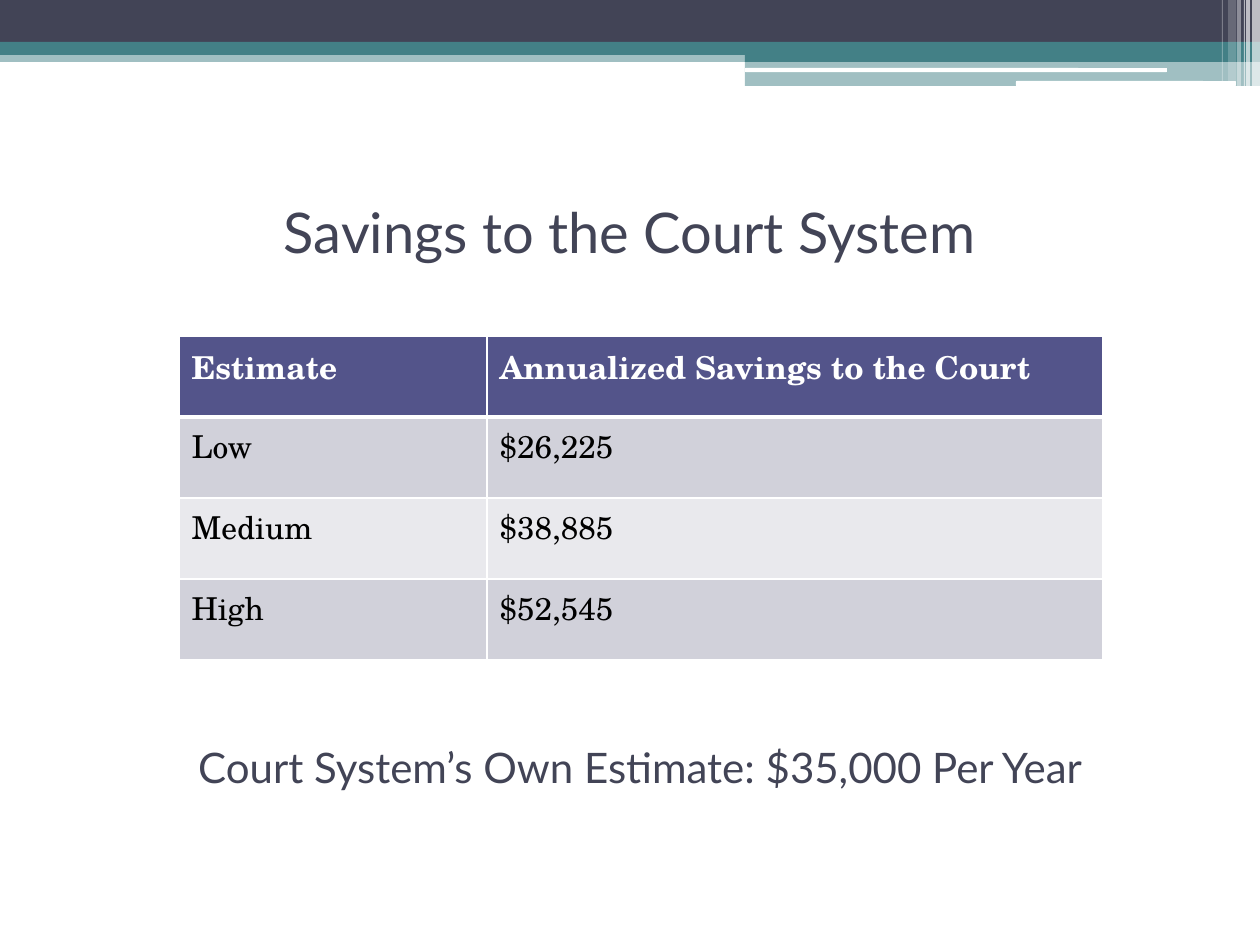
from lxml.etree import SubElement
from pptx import Presentation
from pptx.dml.color import RGBColor
from pptx.enum.shapes import MSO_SHAPE as Preset
from pptx.enum.text import MSO_ANCHOR as Anchor, PP_ALIGN as Align
from pptx.oxml.ns import qn
from pptx.util import Pt

EMU_PER_PX = 914400 / 126
THEME = {
    "dark": "424456", "teal": "438086", "white": "FFFFFF", "black": "000000",
    "header": "53548A", "odd": "D1D1DA", "even": "E9E9ED",
    "heading_font": "Lato", "table_font": "TeX Gyre Schola",
    "title_size": 32, "note_size": 24, "table_size": 18,
}

TITLE = "Savings to the Court System"
NOTE = "Court System’s Own Estimate: $35,000 Per Year"
ESTIMATES = [
    ("Estimate", "Annualized Savings to the Court"),
    ("Low", "$26,225"),
    ("Medium", "$38,885"),
    ("High", "$52,545"),
]

TITLE_BOX = (63, 158, 1134, 147)
NOTE_BOX = (73, 693, 1134, 147)
TABLE_LEFT, TABLE_TOP = 179, 336
COLUMN_WIDTHS, ROW_HEIGHT = (308, 616), 81

# preset, (left, top, width, height), colour, opacity in percent
BANDS = [
    (Preset.RECTANGLE, (0, 50, 1260, 12), "teal", 50),
    (Preset.RECTANGLE, (0, 0, 1260, 43), "dark", 100),
    (Preset.RECTANGLE, (0, 42, 1260, 13), "teal", 100),
    (Preset.RECTANGLE, (745, 49, 515, 13), "teal", 100),
    (Preset.RECTANGLE, (745, 61, 515, 25), "teal", 50),
    (Preset.ROUNDED_RECTANGLE, (745, 68, 422, 4), "white", 100),
    (Preset.ROUNDED_RECTANGLE, (1016, 81, 220, 5), "white", 100),
]
# left, width, height, opacity in percent
STRIPES = [
    (1252, 8, 86, 65), (1246, 4, 86, 65), (1244, 1, 86, 60),
    (1237, 4, 86, 40), (1228, 8, 81, 20), (1222, 1, 81, 30),
]


def px(value):
    return round(value * EMU_PER_PX)


def colour(name):
    return RGBColor.from_string(THEME[name])


def add_band(slide, preset, box, fill, opacity):
    shape = slide.shapes.add_shape(preset, *map(px, box))
    shape.shadow.inherit = False
    shape.line.fill.background()
    shape.fill.solid()
    shape.fill.fore_color.rgb = colour(fill)
    if opacity < 100:
        srgb = shape.element.spPr.find(".//" + qn("a:srgbClr"))
        SubElement(srgb, qn("a:alpha"), val=str(opacity * 1000))


def write(frame, text, font, size, ink, bold=False, align=Align.LEFT):
    paragraph = frame.paragraphs[0]
    paragraph.alignment = align
    run = paragraph.add_run()
    run.text = text
    run.font.color.rgb = colour(ink)
    values = {"name": THEME[font], "size": Pt(THEME[size]), "bold": bold}
    for name, value in values.items():
        setattr(run.font, name, value)


def write_heading(shape, box, text, size):
    for name, value in zip(("left", "top", "width", "height"), box):
        setattr(shape, name, px(value))
    frame = shape.text_frame
    frame.word_wrap = True
    frame.vertical_anchor = Anchor.MIDDLE
    write(frame, text, "heading_font", size, "dark", align=Align.CENTER)


def add_borders(cell, widths):
    properties = cell._tc.get_or_add_tcPr()
    for side, width in widths.items():
        line = SubElement(properties, qn(f"a:ln{side}"), w=str(Pt(width)))
        fill = SubElement(line, qn("a:solidFill"))
        SubElement(fill, qn("a:srgbClr"), val=THEME["white"])


def add_estimates(slide):
    table = slide.shapes.add_table(
        len(ESTIMATES), len(COLUMN_WIDTHS), px(TABLE_LEFT), px(TABLE_TOP),
        px(sum(COLUMN_WIDTHS)), px(ROW_HEIGHT * len(ESTIMATES))).table
    for column, width in zip(table.columns, COLUMN_WIDTHS):
        column.width = px(width)
    for r, texts in enumerate(ESTIMATES):
        is_header = r == 0
        fill = "header" if is_header else ("even", "odd")[r % 2]
        for c, text in enumerate(texts):
            cell = table.cell(r, c)
            add_borders(cell, {"L": 1, "R": 1, "T": 3 if r == 1 else 1,
                               "B": 3 if is_header else 1})
            cell.fill.solid()
            cell.fill.fore_color.rgb = colour(fill)
            write(cell.text_frame, text, "table_font", "table_size",
                  "white" if is_header else "black", bold=is_header)


def main():
    presentation = Presentation()
    presentation.slide_width, presentation.slide_height = px(1260), px(945)
    slide = presentation.slides.add_slide(presentation.slide_layouts[5])
    for band in BANDS:
        add_band(slide, *band)
    for left, width, height, opacity in STRIPES:
        add_band(slide, Preset.RECTANGLE, (left, 0, width, height), "white", opacity)

    title = slide.shapes.title
    title.element.getparent().append(title.element)  # in front of the bands
    write_heading(title, TITLE_BOX, TITLE, "title_size")
    add_estimates(slide)
    note = slide.shapes.add_textbox(*map(px, NOTE_BOX))
    write_heading(note, NOTE_BOX, NOTE, "note_size")
    presentation.save("out.pptx")


if __name__ == "__main__":
    main()
